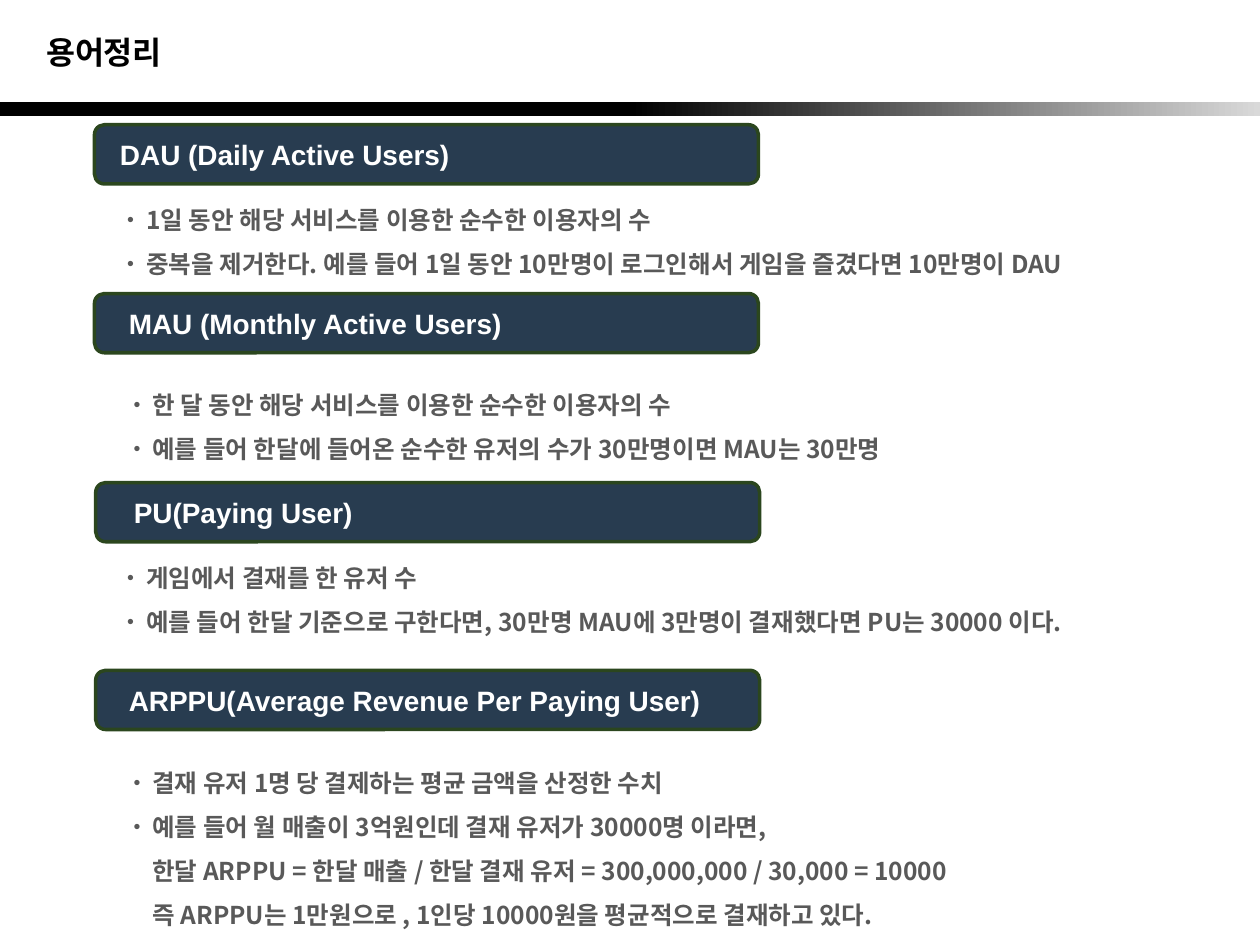
from lxml import etree
from pptx import Presentation
from pptx import util as u
from pptx.dml.color import RGBColor
from pptx.enum import shapes, text
from pptx.oxml import ns

KOREAN = "Noto Sans CJK KR"
LATIN = "Arial"
WIDTH, HEIGHT = 10, 7.5
HEADING_SIZE = (5.27, 0.47)
LIST_INDENT = 0.15

# heading, heading left and top, text inset, list left and top, list height,
# bulleted lines, plain lines
TERMS = [
    ("DAU (Daily Active Users)", (0.75, 0.99), 0.18, (0.91, 1.46), 0.81,
     ["1일 동안 해당 서비스를 이용한 순수한 이용자의 수",
      "중복을 제거한다. 예를 들어 1일 동안 10만명이 로그인해서 게임을 즐겼다면 10만명이 DAU"], []),
    ("MAU (Monthly Active Users)", (0.75, 2.33), 0.25, (0.96, 2.93), 0.81,
     ["한 달 동안 해당 서비스를 이용한 순수한 이용자의 수",
      "예를 들어 한달에 들어온 순수한 유저의 수가 30만명이면 MAU는 30만명"], []),
    ("PU(Paying User)", (0.76, 3.83), 0.28, (0.91, 4.3), 0.81,
     ["게임에서 결재를 한 유저 수",
      "예를 들어 한달 기준으로 구한다면, 30만명 MAU에 3만명이 결재했다면 PU는 30000 이다."], []),
    ("ARPPU(Average Revenue Per Paying User)", (0.76, 5.32), 0.24, (0.96, 5.93), 1.51,
     ["결재 유저 1명 당 결제하는 평균 금액을 산정한 수치",
      "예를 들어 월 매출이 3억원인데 결재 유저가 30000명 이라면,"],
     ["한달 ARPPU = 한달 매출 / 한달 결재 유저 = 300,000,000 / 30,000 = 10000",
      "즉 ARPPU는 1만원으로 , 1인당 10000원을 평균적으로 결재하고 있다."]),
]


def color(value):
    return RGBColor.from_string(value)


def place(shape, box):
    shape.left, shape.top, shape.width, shape.height = map(u.Inches, box)


def format_runs(paragraph, size, name, value):
    for run in paragraph.runs:
        run.font.size = u.Pt(size)
        run.font.bold = True
        run.font.name = name
        run.font.color.rgb = color(value)
        east_asian = etree.SubElement(run.font._element, ns.qn("a:ea"))
        east_asian.set("typeface", name)


def prepare_frame(shape):
    """Fix a placeholder's text at the top left, without automatic fitting."""
    frame = shape.text_frame
    frame.word_wrap = True
    frame.auto_size = text.MSO_AUTO_SIZE.NONE
    frame.vertical_anchor = text.MSO_ANCHOR.TOP
    return frame


def set_bullet(paragraph, bulleted):
    properties = paragraph._p.get_or_add_pPr()
    properties.set("marL", str(u.Inches(LIST_INDENT)))
    properties.set("indent", str(-u.Inches(LIST_INDENT) if bulleted else 0))
    if not bulleted:
        etree.SubElement(properties, ns.qn("a:buNone"))
        return
    bullet_color = etree.SubElement(properties, ns.qn("a:buClr"))
    etree.SubElement(bullet_color, ns.qn("a:srgbClr")).set("val", "595959")
    etree.SubElement(properties, ns.qn("a:buSzPct")).set("val", "80000")
    etree.SubElement(properties, ns.qn("a:buFont")).set("typeface", LATIN)
    etree.SubElement(properties, ns.qn("a:buChar")).set("char", "•")


def add_title(slide, box):
    title = slide.shapes.title
    place(title, box)
    frame = prepare_frame(title)
    frame.text = "용어정리"
    paragraph = frame.paragraphs[0]
    paragraph.alignment = text.PP_ALIGN.LEFT
    paragraph.line_spacing = u.Pt(23)
    format_runs(paragraph, 18, KOREAN, "000000")
    paragraph.runs[0].font._element.set("spc", "-20")


def add_gradient_bar(slide, box):
    bar = slide.shapes.add_shape(shapes.MSO_SHAPE.RECTANGLE, *map(u.Inches, box))
    bar.shadow.inherit = False
    bar.line.fill.background()
    bar.fill.gradient()
    bar.fill.gradient_angle = 180
    for stop, position, value in zip(bar.fill.gradient_stops, (0, 0.5), ("D9D9D9", "000000")):
        stop.position = position
        stop.color.rgb = color(value)


def add_heading(slide, box, inset, heading):
    shape = slide.shapes.add_shape(shapes.MSO_SHAPE.ROUNDED_RECTANGLE, *map(u.Inches, box))
    shape.shadow.inherit = False
    shape.fill.solid()
    shape.fill.fore_color.rgb = color("283C50")
    shape.line.color.rgb = color("2B461E")
    shape.line.width = u.Pt(2)
    frame = shape.text_frame
    frame.margin_left = u.Inches(inset)
    frame.vertical_anchor = text.MSO_ANCHOR.MIDDLE
    frame.text = heading
    frame.paragraphs[0].alignment = text.PP_ALIGN.LEFT
    format_runs(frame.paragraphs[0], 16, LATIN, "FFFFFF")


def fill_list(placeholder, box, bulleted, plain):
    place(placeholder, box)
    frame = prepare_frame(placeholder)
    frame.text = "\n".join(bulleted + plain)
    for index, paragraph in enumerate(frame.paragraphs):
        paragraph.line_spacing = 1.5
        paragraph.space_before = u.Pt(0)
        set_bullet(paragraph, index < len(bulleted))
        format_runs(paragraph, 14, KOREAN, "595959")


def main():
    presentation = Presentation()
    presentation.slide_width = u.Inches(WIDTH)
    presentation.slide_height = u.Inches(HEIGHT)
    # The comparison layout has a title and four body placeholders.
    slide = presentation.slides.add_slide(presentation.slide_layouts[4])
    title, *lists = slide.placeholders
    add_title(slide, (0.27, 0.19, 4.62, 0.4))
    add_gradient_bar(slide, (0, 0.81, WIDTH, 0.11))
    for placeholder, term in zip(lists, TERMS):
        heading, corner, inset, list_corner, height, bulleted, plain = term
        add_heading(slide, (*corner, *HEADING_SIZE), inset, heading)
        list_width = WIDTH - list_corner[0]
        fill_list(placeholder, (*list_corner, list_width, height), bulleted, plain)
    presentation.save("out.pptx")


if __name__ == "__main__":
    main()
